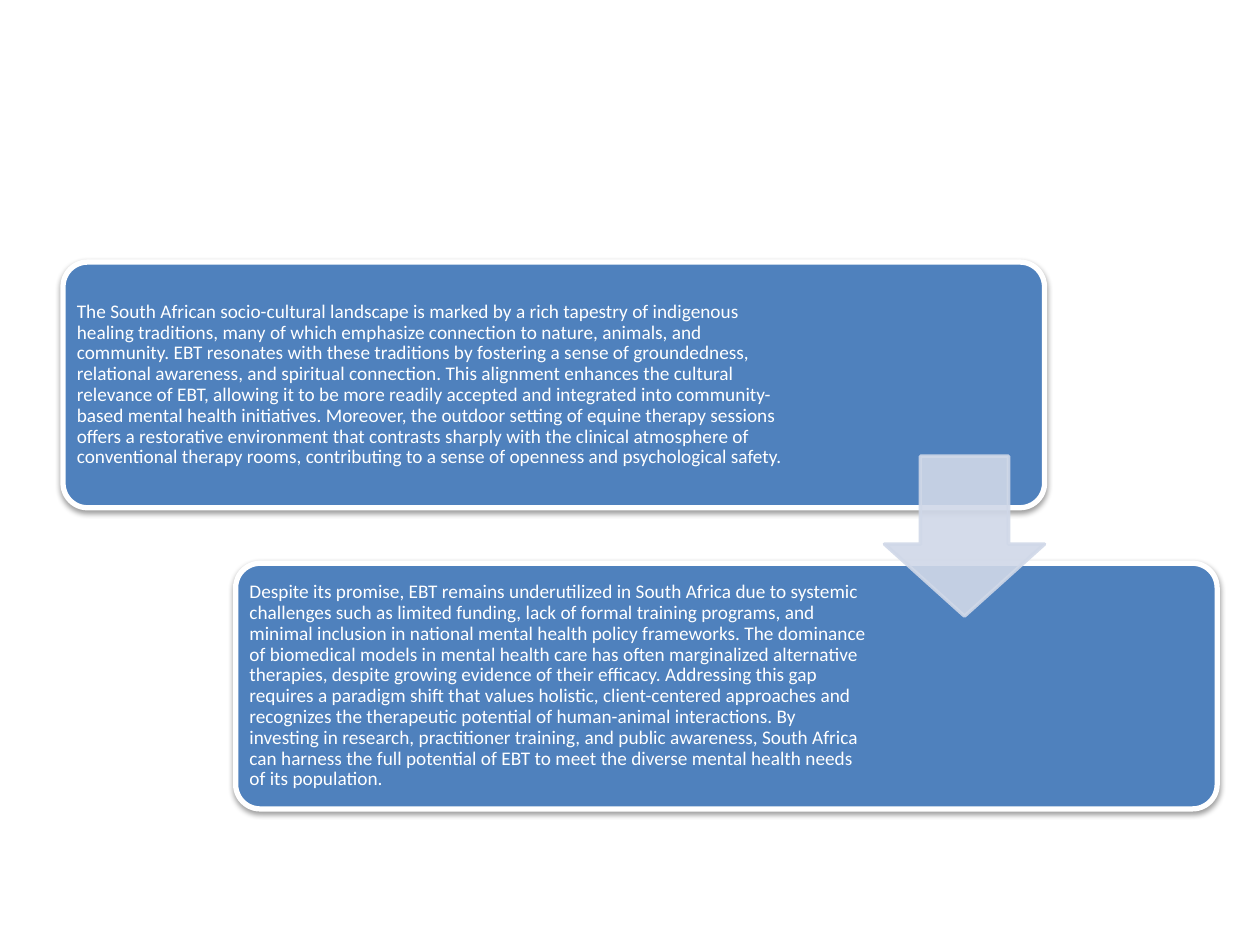
"""Build a slide with two staggered statements on equine therapy joined by a down arrow."""
import pptx
import pptx.dml.color
import pptx.enum.shapes
import pptx.enum.text
import pptx.oxml
import pptx.oxml.ns
import pptx.util

Inches = pptx.util.Inches
Pt = pptx.util.Pt
SHAPES = pptx.enum.shapes.MSO_SHAPE


def paint(color_format, hex_color, opacity=100):
    color_format.rgb = pptx.dml.color.RGBColor.from_string(hex_color)
    if opacity < 100:
        node = color_format._xFill.find(pptx.oxml.ns.qn("a:srgbClr"))
        node.append(pptx.oxml.parse_xml(
            f'<a:alpha {pptx.oxml.ns.nsdecls("a")} val="{opacity * 1000}"/>'))


def add_panel(shapes, preset, place, adjustments, fill, line, line_width, opacity=100):
    panel = shapes.add_shape(preset, *[Inches(length) for length in place])
    for index, value in enumerate(adjustments):
        panel.adjustments[index] = value
    panel.shadow.inherit = False
    panel.fill.solid()
    paint(panel.fill.fore_color, fill)
    panel.line.width = Pt(line_width)
    panel.line.fill.solid()
    paint(panel.line.color, line)
    if opacity < 100:
        for node in panel._element.spPr.iter(pptx.oxml.ns.qn("a:srgbClr")):
            node.append(pptx.oxml.parse_xml(
                f'<a:alpha {pptx.oxml.ns.nsdecls("a")} val="{opacity * 1000}"/>'))
    return panel


presentation = pptx.Presentation()
presentation.slide_width = Inches(10)
presentation.slide_height = Inches(7.5)
slide = presentation.slides.add_slide(presentation.slide_layouts[6])

statements = [
    (0.5, 2.08, 5.78,
     "The South African socio-cultural landscape is marked by a rich tapestry of indigenous "
     "healing traditions, many of which emphasize connection to nature, animals, and community. "
     "EBT resonates with these traditions by fostering a sense of groundedness, relational "
     "awareness, and spiritual connection. This alignment enhances the cultural relevance of EBT, "
     "allowing it to be more readily accepted and integrated into community-based mental health "
     "initiatives. Moreover, the outdoor setting of equine therapy sessions offers a restorative "
     "environment that contrasts sharply with the clinical atmosphere of conventional therapy "
     "rooms, contributing to a sense of openness and psychological safety."),
    (1.87, 4.47, 5.03,
     "Despite its promise, EBT remains underutilized in South Africa due to systemic challenges "
     "such as limited funding, lack of formal training programs, and minimal inclusion in national "
     "mental health policy frameworks. The dominance of biomedical models in mental health care "
     "has often marginalized alternative therapies, despite growing evidence of their efficacy. "
     "Addressing this gap requires a paradigm shift that values holistic, client-centered "
     "approaches and recognizes the therapeutic potential of human-animal interactions. By "
     "investing in research, practitioner training, and public awareness, South Africa can harness "
     "the full potential of EBT to meet the diverse mental health needs of its population."),
]

for left, top, text_width, statement in statements:
    card = add_panel(slide.shapes, SHAPES.ROUNDED_RECTANGLE, (left, top, 7.79, 1.95),
                     [0.1], "4F81BD", "FFFFFF", 3)
    effects = card._element.spPr.find(pptx.oxml.ns.qn("a:effectLst"))
    effects.append(pptx.oxml.parse_xml(
        f'<a:outerShdw {pptx.oxml.ns.nsdecls("a")} blurRad="{Pt(3.1)}" dist="{Pt(1.6)}" '
        'dir="5400000" rotWithShape="0"><a:srgbClr val="000000">'
        '<a:alpha val="38000"/></a:srgbClr></a:outerShdw>'))

    caption = slide.shapes.add_textbox(
        Inches(left + 0.06), Inches(top + 0.055), Inches(text_width), Inches(1.84))
    frame = caption.text_frame
    frame.word_wrap = True
    frame.vertical_anchor = pptx.enum.text.MSO_ANCHOR.MIDDLE
    frame.margin_left = frame.margin_right = Inches(0.05)
    frame.margin_top = frame.margin_bottom = Inches(0.05)
    frame.text = statement
    paragraph = frame.paragraphs[0]
    paragraph.line_spacing = 0.9
    font = paragraph.runs[0].font
    font.name = "Calibri"
    font.size = Pt(11)
    font.fill.solid()
    paint(font.fill.fore_color, "FFFFFF")

add_panel(slide.shapes, SHAPES.DOWN_ARROW, (7.02, 3.62, 1.27, 1.27),
          [0.55, 0.45], "D0D8E8", "D0D8E8", 2, opacity=90)

presentation.save("out.pptx")
